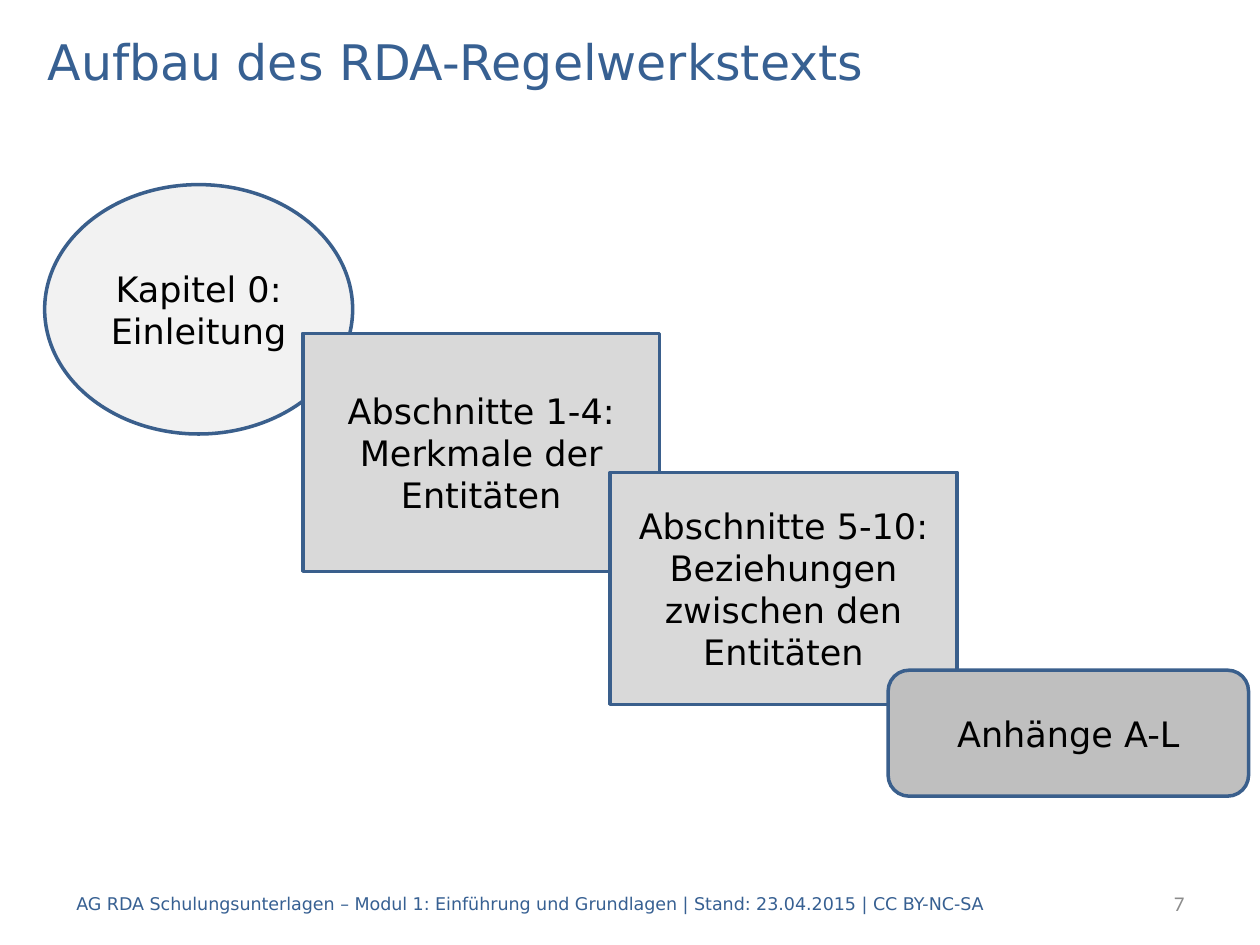
"""Build the slide on the structure of the RDA rules text."""
from pptx import Presentation
from pptx.dml.color import RGBColor
from pptx.enum.shapes import MSO_SHAPE
from pptx.enum.text import MSO_ANCHOR, PP_ALIGN
from pptx.util import Pt

BLUE = RGBColor(0x37, 0x60, 0x92)
OUTLINE = RGBColor(0x3A, 0x5F, 0x8C)
BLACK = RGBColor(0x00, 0x00, 0x00)
NUMBER_GREY = RGBColor(0x8C, 0x8C, 0x8C)
PALE_GREY = RGBColor(0xF2, 0xF2, 0xF2)
LIGHT_GREY = RGBColor(0xD9, 0xD9, 0xD9)
MID_GREY = RGBColor(0xBF, 0xBF, 0xBF)
FONT = "DejaVu Sans"


def place(shape, left, top, width, height):
    shape.left, shape.top = Pt(left), Pt(top)
    shape.width, shape.height = Pt(width), Pt(height)


def write(shape, text, size, color, align, font=FONT):
    frame = shape.text_frame
    frame.word_wrap = True
    frame.vertical_anchor = MSO_ANCHOR.MIDDLE
    paragraph = frame.paragraphs[0]
    paragraph.text = text
    paragraph.alignment = align
    paragraph.font.name = font
    paragraph.font.size = Pt(size)
    paragraph.font.color.rgb = color


presentation = Presentation()
presentation.slide_width, presentation.slide_height = Pt(720), Pt(540)
page = presentation.slides.add_slide(presentation.slide_layouts[5])

title = page.shapes.title
place(title, 20, 14.5, 680, 40.5)
write(title, "Aufbau des RDA-Regelwerkstexts", 28, BLUE, PP_ALIGN.LEFT)

steps = [
    (MSO_SHAPE.OVAL, "Kapitel 0: Einleitung", PALE_GREY, 25.5, 105.5, 176, 142.5),
    (MSO_SHAPE.RECTANGLE, "Abschnitte 1-4: Merkmale der Entitäten", LIGHT_GREY,
     173, 190.5, 204, 136),
    (MSO_SHAPE.RECTANGLE, "Abschnitte 5-10: Beziehungen zwischen den Entitäten", LIGHT_GREY,
     348.5, 270, 198.5, 132.5),
    (MSO_SHAPE.ROUNDED_RECTANGLE, "Anhänge A-L", MID_GREY, 507.5, 383, 206, 72),
]
for kind, text, fill, left, top, width, height in steps:
    step = page.shapes.add_shape(kind, Pt(left), Pt(top), Pt(width), Pt(height))
    step.shadow.inherit = False
    step.fill.solid()
    step.fill.fore_color.rgb = fill
    step.line.color.rgb = OUTLINE
    step.line.width = Pt(2)
    write(step, text, 20, BLACK, PP_ALIGN.CENTER)

footer = page.shapes.add_textbox(Pt(36.5), Pt(502), Pt(578), Pt(28.5))
write(footer, "AG RDA Schulungsunterlagen – Modul 1: Einführung und Grundlagen"
      " | Stand: 23.04.2015 | CC BY-NC-SA", 10, BLUE, PP_ALIGN.LEFT)

page_number = page.shapes.add_textbox(Pt(569.5), Pt(502), Pt(114.5), Pt(28.5))
write(page_number, "7", 12, NUMBER_GREY, PP_ALIGN.RIGHT, "Calibri")

presentation.save("out.pptx")
